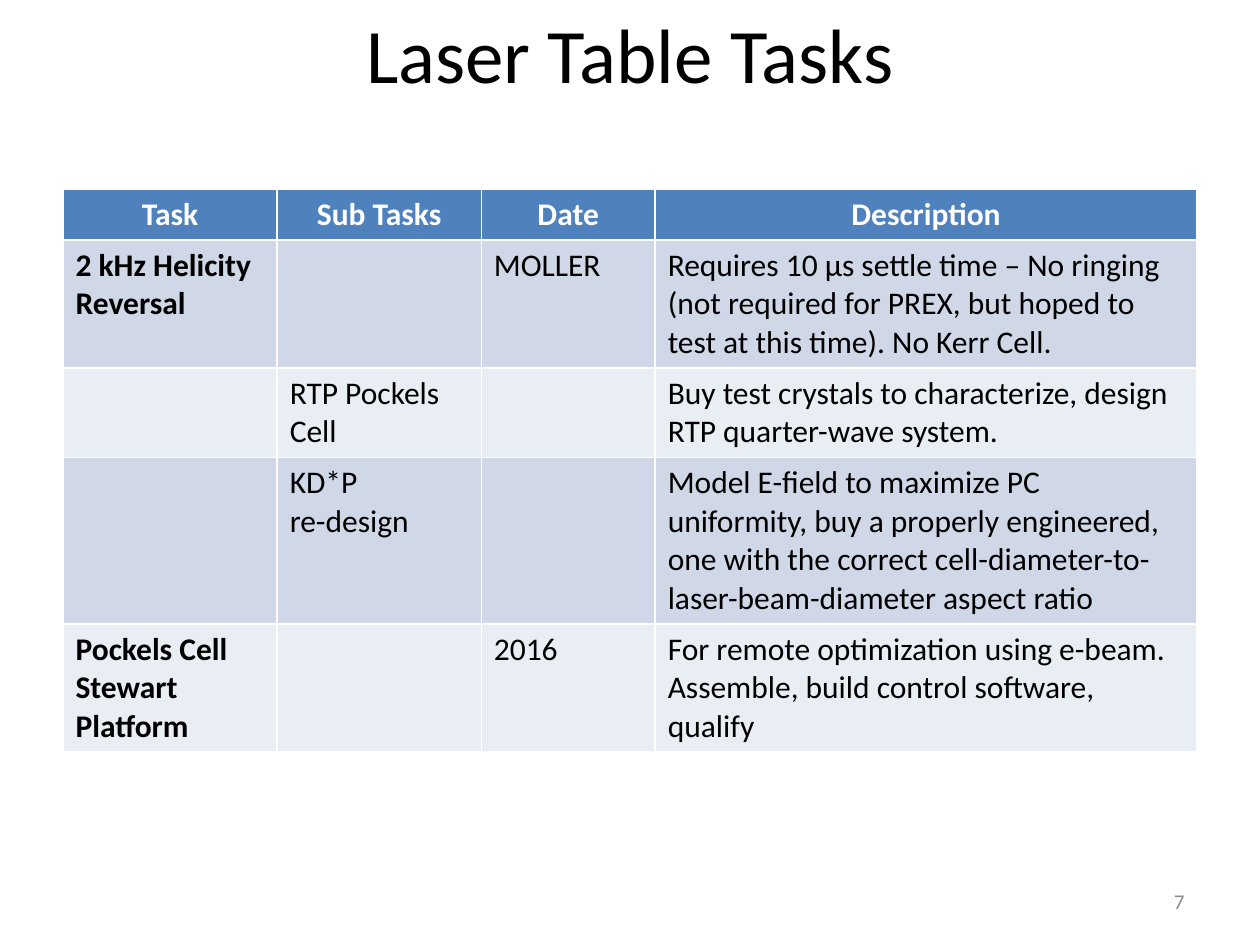
from dataclasses import dataclass

from pptx import Presentation
from pptx import util as u
from pptx.dml.color import RGBColor
from pptx.enum import text


@dataclass(frozen=True)
class Theme:
    font: str = "Calibri"
    title_size: int = 44
    table_size: int = 18
    number_size: int = 12
    ink: str = "000000"
    header_ink: str = "FFFFFF"
    number_ink: str = "8C8C8C"
    header_fill: str = "4F81BD"
    bands: tuple = ("D0D8E8", "E9EDF4")


THEME = Theme()
ALIGN = text.PP_ALIGN

COLUMN_WIDTHS = (1.7, 1.62, 1.38, 4.3)
ROW_HEIGHTS = (0.39, 0.83, 0.51, 1.28, 0.73)
# A line break in an entry starts a new paragraph.
TASKS = (
    ("Task", "Sub Tasks", "Date", "Description"),
    ("2 kHz Helicity Reversal", "", "MOLLER",
     "Requires 10 µs settle time – No ringing\n"
     "(not required for PREX, but hoped to test at this time). No Kerr Cell."),
    ("", "RTP Pockels Cell", "",
     "Buy test crystals to characterize, design RTP quarter-wave system."),
    ("", "KD*P\nre-design", "",
     "Model E-field to maximize PC uniformity, buy a properly engineered, "
     "one with the correct cell-diameter-to-laser-beam-diameter aspect ratio"),
    ("Pockels Cell Stewart Platform", "", "2016",
     "For remote optimization using e-beam.\n"
     "Assemble, build control software, qualify"),
)


def inches(box):
    return [u.Inches(length) for length in box]


def write(frame, wording, size, color, align, bold=False):
    for index, line in enumerate(wording.split("\n")):
        paragraph = frame.paragraphs[0] if index == 0 else frame.add_paragraph()
        paragraph.alignment = align
        run = paragraph.add_run()
        run.text = line
        run.font.name = THEME.font
        run.font.size = u.Pt(size)
        run.font.bold = bold
        run.font.color.rgb = RGBColor.from_string(color)


def place_title(slide, box, wording):
    title = slide.shapes.title
    title.left, title.top, title.width, title.height = inches(box)
    title.text_frame.vertical_anchor = text.MSO_ANCHOR.MIDDLE
    write(title.text_frame, wording, THEME.title_size, THEME.ink, ALIGN.CENTER)


def place_task_table(slide, box):
    # The default table style supplies the white cell borders.
    table = slide.shapes.add_table(len(TASKS), len(COLUMN_WIDTHS), *inches(box)).table
    for column, width in zip(table.columns, COLUMN_WIDTHS):
        column.width = u.Inches(width)
    for row, height in zip(table.rows, ROW_HEIGHTS):
        row.height = u.Inches(height)

    for r, entries in enumerate(TASKS):
        header = r == 0
        fill = THEME.header_fill if header else THEME.bands[(r - 1) % 2]
        for c, entry in enumerate(entries):
            cell = table.cell(r, c)
            cell.fill.solid()
            cell.fill.fore_color.rgb = RGBColor.from_string(fill)
            if entry:
                write(cell.text_frame, entry, THEME.table_size,
                      THEME.header_ink if header else THEME.ink,
                      ALIGN.CENTER if header else ALIGN.LEFT,
                      bold=header or c == 0)


def place_page_number(slide, box, number):
    frame = slide.shapes.add_textbox(*inches(box)).text_frame
    frame.word_wrap = True
    frame.vertical_anchor = text.MSO_ANCHOR.MIDDLE
    write(frame, number, THEME.number_size, THEME.number_ink, ALIGN.RIGHT)


def main():
    deck = Presentation()
    deck.slide_width, deck.slide_height = inches((10, 7.5))
    title_only = deck.slide_layouts[5]
    slide = deck.slides.add_slide(title_only)
    place_title(slide, (0.5, 0, 9, 0.83), "Laser Table Tasks")
    place_task_table(slide, (0.5, 1.5, sum(COLUMN_WIDTHS), sum(ROW_HEIGHTS)))
    place_page_number(slide, (7.17, 6.95, 2.33, 0.4), "7")
    deck.save("out.pptx")


if __name__ == "__main__":
    main()
